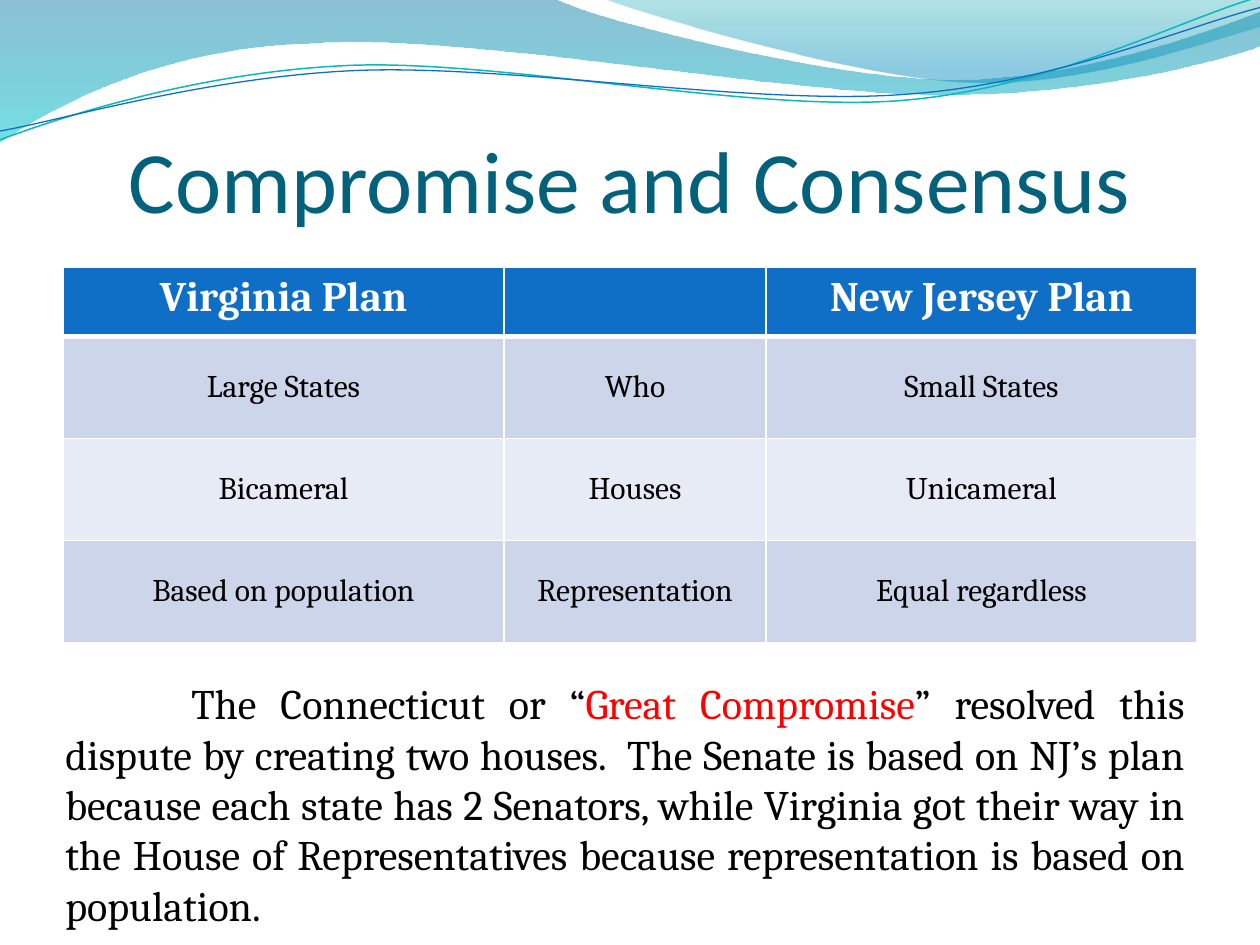
from lxml import etree
from pptx import Presentation
from pptx import util as u
from pptx.dml.color import RGBColor
from pptx.enum import text
from pptx.oxml.ns import qn

COLORS = {
    "title": "04617B", "header": "0F6FC6", "band": "CCD5EA", "pale": "E7EBF5",
    "black": "000000", "white": "FFFFFF", "red": "FF0000", "teal": "0AB8BF",
    "deep": "0074A1", "cyan": "00C6CF", "sea": "00A1A9", "sky": "008BBF",
}


def add_wave(slide, start, parts, close):
    points = [(u.Inches(x), u.Inches(y)) for part in parts for x, y in zip(part[::2], part[1::2])]
    builder = slide.shapes.build_freeform(*map(u.Inches, start))
    builder.add_line_segments(points, close=close)
    sp = builder.convert_to_shape()
    sp.shadow.inherit = False
    lines = iter(list(sp._element.iter(qn("a:lnTo"))))
    for part in parts:
        line = next(lines)
        if len(part) == 6:
            curve = etree.Element(qn("a:cubicBezTo"))
            line.addprevious(curve)
            for step in (line, next(lines), next(lines)):
                curve.append(step[0])
                step.getparent().remove(step)
    return sp


def style_run(r, font, size, color, bold=False):
    r.font.name = font
    r.font.size = u.Pt(size)
    r.font.bold = bold
    r.font.color.rgb = RGBColor.from_string(COLORS[color])


prs = Presentation()
prs.slide_width, prs.slide_height = u.Inches(10), u.Inches(7.5)
slide = prs.slides.add_slide(prs.slide_layouts[5])

bands = [
    ((0, 0), [(4.4, -0.01), (4.76, 0.17, 6.64, 0.63, 7.58, 0.63),
              (8.53, 0.63, 9.58, 0.26, 10, 0.09), (10.01, 0.36),
              (9.83, 0.44, 8.7, 0.76, 7.46, 0.75), (6.22, 0.75, 3.82, 0.28, 2.57, 0.34),
              (1.29, 0.36, 0.46, 0.83, -0.01, 1.13), (0, 0)],
     [(0, "deep", 45), (1, "cyan", 55)]),
    ((4.79, -0.01), [(5.09, 0.11, 6.82, 0.62, 7.69, 0.65),
                     (8.56, 0.69, 9.61, 0.32, 10, 0.21), (10, 0), (4.79, -0.01)],
     [(0, "sea", 30), (0.8, "sky", 45)]),
]
for start, parts, stops in bands:
    sp = add_wave(slide, start, parts, True)
    sp.line.fill.background()
    sp.fill.gradient()
    sp.fill.gradient_angle = 270
    for stop, (position, color, _) in zip(sp.fill.gradient_stops, stops):
        stop.position = position
        stop.color.rgb = RGBColor.from_string(COLORS[color])
    for clr, (_, _, opacity) in zip(sp._element.spPr.iter(qn("a:srgbClr")), stops):
        etree.SubElement(clr, qn("a:alpha")).set("val", str(opacity * 1000))

strands = [
    ((0, 1.11), [(0.48, 0.93, 1.58, 0.57, 2.77, 0.52), (3.95, 0.47, 5.93, 0.89, 7.13, 0.8),
                 (8.33, 0.71, 9.38, 0.15, 9.98, -0.02)], "teal", 0.85),
    ((0, 1.04), [(0.47, 0.96, 1.64, 0.61, 2.83, 0.56), (4.03, 0.51, 5.97, 0.84, 7.17, 0.75),
                 (8.36, 0.67, 9.41, 0.21, 10, 0.06)], "header", 0.75),
]
for start, parts, color, width in strands:
    sp = add_wave(slide, start, parts, False)
    sp.fill.background()
    sp.line.color.rgb = RGBColor.from_string(COLORS[color])
    sp.line.width = u.Pt(width)

title = slide.shapes.title
slide.shapes._spTree.append(title._element)
title.left, title.top, title.width, title.height = map(u.Inches, (0.5, 0.77, 9, 1.06))
tf = title.text_frame
tf.text = "Compromise and Consensus"
tf.auto_size = text.MSO_AUTO_SIZE.NONE
tf.vertical_anchor = text.MSO_ANCHOR.BOTTOM
tf.margin_left = tf.margin_right = tf.margin_bottom = 0
tf.margin_top = u.Inches(0.05)
p = tf.paragraphs[0]
p.alignment = text.PP_ALIGN.CENTER
style_run(p.runs[0], "Calibri", 50, "title")

plans = [
    ("Virginia Plan", "", "New Jersey Plan"),
    ("Large States", "Who", "Small States"),
    ("Bicameral", "Houses", "Unicameral"),
    ("Based on population", "Representation", "Equal regardless"),
]
table = slide.shapes.add_table(4, 3, *map(u.Inches, (0.5, 2.12, 9, 2.98))).table
for column, width in zip(table.columns, (3.5, 2.08, 3.42)):
    column.width = u.Inches(width)
for i, (row, words) in enumerate(zip(table.rows, plans)):
    header = i == 0
    row.height = u.Inches(0.55 if header else 0.81)
    fill = "header" if header else "band" if i % 2 else "pale"
    for cell, word in zip(row.cells, words):
        tcPr = cell._tc.get_or_add_tcPr()
        for side in ("lnL", "lnR", "lnT", "lnB"):
            thick = (header and side == "lnB") or (i == 1 and side == "lnT")
            ln = etree.SubElement(tcPr, qn(f"a:{side}"), w=str(u.Pt(3 if thick else 1)))
            solid = etree.SubElement(ln, qn("a:solidFill"))
            etree.SubElement(solid, qn("a:srgbClr"), val=COLORS["white"])
        cell.fill.solid()
        cell.fill.fore_color.rgb = RGBColor.from_string(COLORS[fill])
        cell.vertical_anchor = text.MSO_ANCHOR.TOP if header else text.MSO_ANCHOR.MIDDLE
        p = cell.text_frame.paragraphs[0]
        p.text = word
        p.alignment = text.PP_ALIGN.CENTER
        for r in p.runs:
            style_run(r, "Cambria", 24 if header else 18, "white" if header else "black", header)

box = slide.shapes.add_textbox(*map(u.Inches, (0.42, 5.33, 9.08, 2.12)))
tf = box.text_frame
tf.word_wrap = True
tf.auto_size = text.MSO_AUTO_SIZE.SHAPE_TO_FIT_TEXT
p = tf.paragraphs[0]
p.alignment = text.PP_ALIGN.JUSTIFY
pPr = p._p.get_or_add_pPr()
tabs = etree.SubElement(pPr, qn("a:tabLst"))
etree.SubElement(tabs, qn("a:tab"), pos=str(u.Inches(1)), algn="l")
for words, color in [
    ("\tThe Connecticut or “", "black"),
    ("Great Compromise", "red"),
    ("” resolved this dispute by creating two houses.  The Senate is based on NJ’s plan "
     "because each state has 2 Senators, while Virginia got their way in the House of "
     "Representatives because representation is based on population.", "black"),
]:
    r = p.add_run()
    r.text = words
    style_run(r, "Cambria", 24, color)

prs.save("out.pptx")
